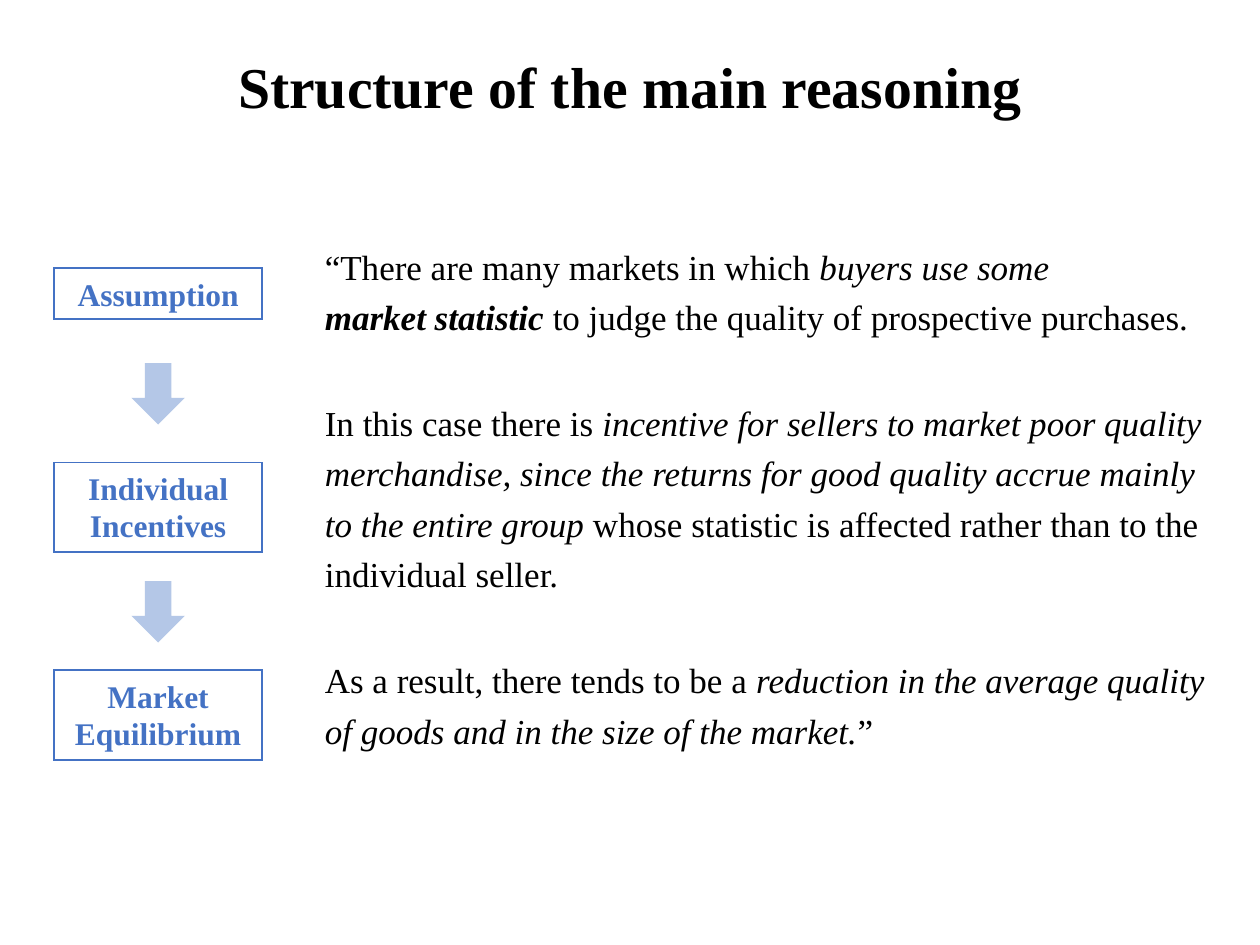
from lxml import etree
from pptx import Presentation
from pptx.dml.color import RGBColor
from pptx.enum.shapes import MSO_SHAPE
from pptx.enum.text import MSO_ANCHOR, PP_ALIGN
from pptx.oxml.ns import qn
from pptx.util import Emu, Pt

EMU_PER_PX = 9144  # 100 px to the inch
BLACK = RGBColor(0x00, 0x00, 0x00)
WHITE = RGBColor(0xFF, 0xFF, 0xFF)
BLUE = RGBColor(0x44, 0x72, 0xC4)
LIGHT_BLUE = RGBColor(0xB4, 0xC7, 0xE7)
RECTANGLE = MSO_SHAPE.RECTANGLE
DOWN_ARROW = MSO_SHAPE.DOWN_ARROW
CENTER, LEFT = PP_ALIGN.CENTER, PP_ALIGN.LEFT
TOP, MIDDLE = MSO_ANCHOR.TOP, MSO_ANCHOR.MIDDLE

PLAIN, ITALIC, BOLD_ITALIC = (False, False), (False, True), (True, True)
LINE_BREAK = "\n"

QUOTE = [
    [("“There are many markets in which ", PLAIN),
     ("buyers use some", ITALIC),
     (LINE_BREAK, PLAIN),
     ("market statistic ", BOLD_ITALIC),
     ("to judge the quality of prospective purchases.", PLAIN)],
    [("In this case there is ", PLAIN),
     ("incentive for sellers to market poor quality merchandise, since the "
      "returns for good quality accrue mainly to the entire group ", ITALIC),
     ("whose statistic is affected rather than to the individual seller.", PLAIN)],
    [("As a result, there tends to be a ", PLAIN),
     ("reduction in the average quality of goods and in the size of the market.",
      ITALIC),
     ("”", PLAIN)],
]
STEPS = [("Assumption", 213, 40),
         ("Individual Incentives", 367, 71),
         ("Market Equilibrium", 532, 71)]
ARROW_TOPS = [289, 462]


class SlideBuilder:
    font_name = "Times New Roman"

    def __init__(self, slide):
        self.slide = slide

    def place(self, *lengths):
        return [Emu(length * EMU_PER_PX) for length in lengths]

    def style_run(self, run, size, color, bold=False, italic=False):
        font = run.font
        font.name, font.size = self.font_name, Pt(size)
        font.bold, font.italic = bold, italic
        font.color.rgb = color

    def text_box(self, bounds, anchor):
        frame = self.slide.shapes.add_textbox(*self.place(*bounds)).text_frame
        frame.word_wrap = True
        frame.vertical_anchor = anchor
        return frame

    def title(self, text, bounds):
        frame = self.text_box(bounds, MIDDLE)
        frame.text = text
        para = frame.paragraphs[0]
        para.alignment, para.line_spacing = CENTER, 0.9
        self.style_run(para.runs[0], 33, BLACK, bold=True)

    def body(self, paragraphs, bounds):
        frame = self.text_box(bounds, TOP)
        for index, parts in enumerate(paragraphs):
            para = frame.add_paragraph() if index else frame.paragraphs[0]
            para.alignment, para.line_spacing = LEFT, 1.2
            para.space_before = Pt(31.8 if index else 1.5)
            for text, (bold, italic) in parts:
                if text == LINE_BREAK:
                    para.add_line_break()
                    continue
                run = para.add_run()
                run.text = text
                self.style_run(run, 20, BLACK, bold, italic)

    def shape(self, kind, bounds, fill, line):
        """Add a flat preset shape whose outline has sharp corners."""
        shape = self.slide.shapes.add_shape(kind, *self.place(*bounds))
        shape.shadow.inherit = False
        shape.fill.solid()
        shape.fill.fore_color.rgb = fill
        shape.line.color.rgb = line
        shape.line.width = Pt(1)
        outline = shape.line._get_or_add_ln()
        etree.SubElement(outline, qn("a:miter"), lim="800000")
        return shape

    def step(self, label, bounds):
        frame = self.shape(RECTANGLE, bounds, WHITE, BLUE).text_frame
        frame.word_wrap = True
        frame.vertical_anchor = TOP
        frame.text = label
        para = frame.paragraphs[0]
        para.alignment = CENTER
        self.style_run(para.runs[0], 18, BLUE, bold=True)

    def arrow(self, bounds):
        self.shape(DOWN_ARROW, bounds, LIGHT_BLUE, LIGHT_BLUE)


def main():
    deck = Presentation()
    deck.slide_width = Emu(1000 * EMU_PER_PX)
    deck.slide_height = Emu(750 * EMU_PER_PX)
    page = SlideBuilder(deck.slides.add_slide(deck.slide_layouts[6]))
    page.title("Structure of the main reasoning", (0, 39, 1000, 65))
    page.body(QUOTE, (248, 183, 724, 527))
    for label, top, height in STEPS:
        page.step(label, (43, top, 165, height))
    for top in ARROW_TOPS:
        page.arrow((106, top, 39, 47))
    deck.save("out.pptx")


if __name__ == "__main__":
    main()
